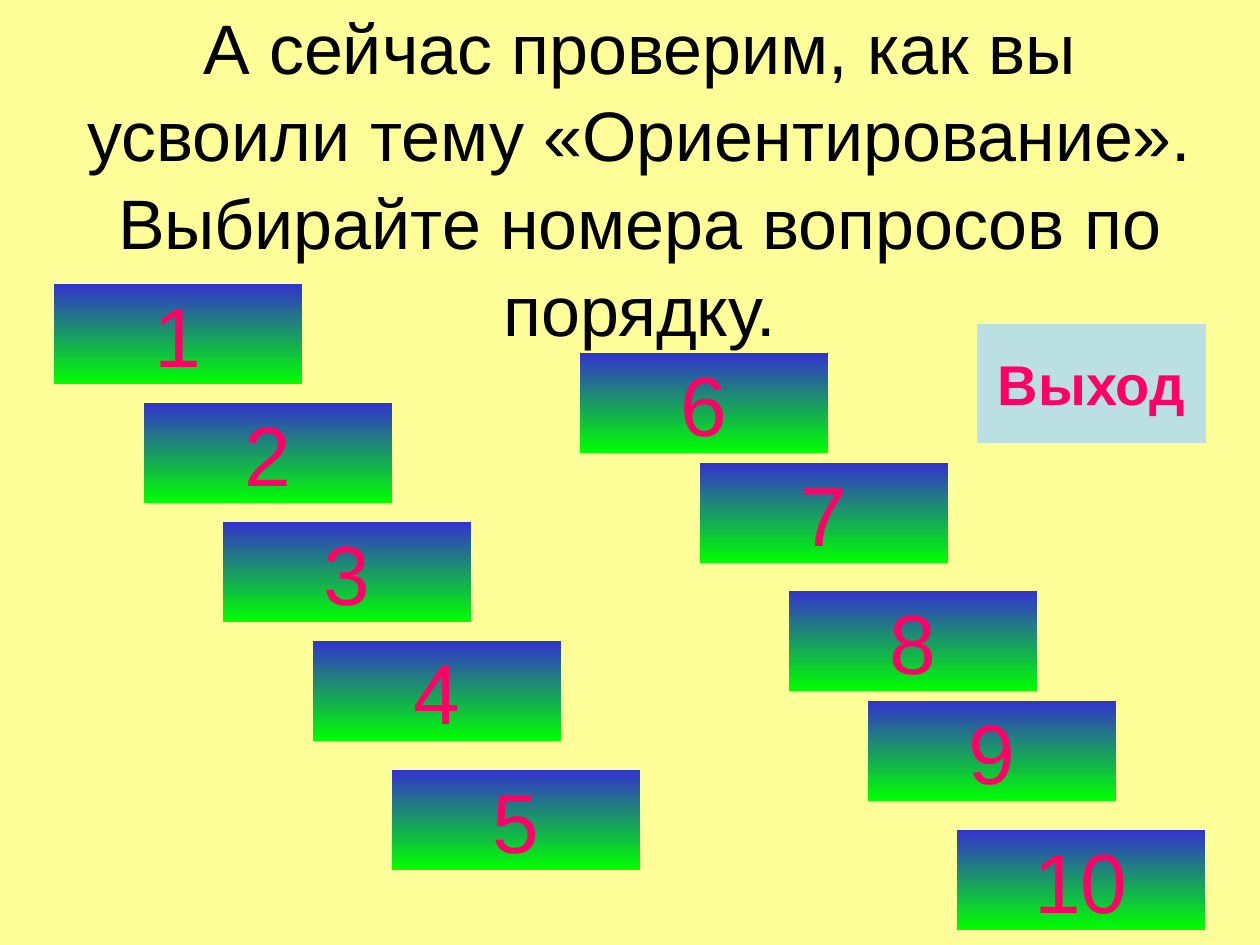
from pptx import Presentation
from pptx.dml.color import RGBColor
from pptx.enum.shapes import MSO_SHAPE
from pptx.enum.text import MSO_ANCHOR, PP_ALIGN
from pptx.util import Emu, Pt

BUTTON = MSO_SHAPE.ACTION_BUTTON_CUSTOM
MIDDLE = MSO_ANCHOR.MIDDLE
CENTER = PP_ALIGN.CENTER
PX_PER_INCH = 126
PINK = "FF0066"

# Top left corners of the two staircases of question buttons
BUTTON_SIZE = (248, 100)
QUESTION_CORNERS = [
    (54, 284), (144, 403), (223, 522), (313, 641), (392, 770),
    (580, 353), (700, 463), (789, 591), (868, 701), (957, 830),
]


def px(length):
    return Emu(round(length * 914400 / PX_PER_INCH))


def color(value):
    return RGBColor.from_string(value)


def write(shape, text, size, ink, bold=False, wrap=False):
    frame = shape.text_frame
    frame.word_wrap = wrap
    frame.vertical_anchor = MIDDLE
    para = frame.paragraphs[0]
    para.text = text
    para.alignment = CENTER
    font = para.font
    font.name, font.size, font.bold = "Arial", Pt(size), bold
    font.color.rgb = color(ink)
    return para


def add_title(page, box):
    title = page.shapes.add_textbox(*map(px, box))
    text = ("А сейчас проверим, как вы усвоили тему «Ориентирование».\v"
            "Выбирайте номера вопросов по порядку.")
    para = write(title, text, 40, "000000", wrap=True)
    para.line_spacing = 1.04


def add_button(page, box):
    button = page.shapes.add_shape(BUTTON, *map(px, box))
    button.shadow.inherit = False
    button.line.fill.background()
    return button


def add_question(page, box, number):
    button = add_button(page, box)
    fill = button.fill
    fill.gradient()
    fill.gradient_angle = 270  # counter-clockwise: runs from top to bottom
    for stop, value in zip(fill.gradient_stops, ("3333CC", "00FF00")):
        stop.color.rgb = color(value)
    write(button, str(number), 48, PINK)


def add_exit(page, box):
    button = add_button(page, box)
    button.fill.solid()
    button.fill.fore_color.rgb = color("BBE0E3")
    write(button, "Выход", 32, PINK, bold=True)


def main():
    deck = Presentation()
    deck.slide_width, deck.slide_height = px(1260), px(945)
    page = deck.slides.add_slide(deck.slide_layouts[6])
    page.background.fill.solid()
    page.background.fill.fore_color.rgb = color("FFFF99")

    # Heading
    add_title(page, (63, 38, 1153, 276))

    # Numbered questions
    for number, corner in enumerate(QUESTION_CORNERS, start=1):
        add_question(page, corner + BUTTON_SIZE, number)

    # Way out
    add_exit(page, (977, 324, 229, 119))

    deck.save("out.pptx")


if __name__ == "__main__":
    main()
